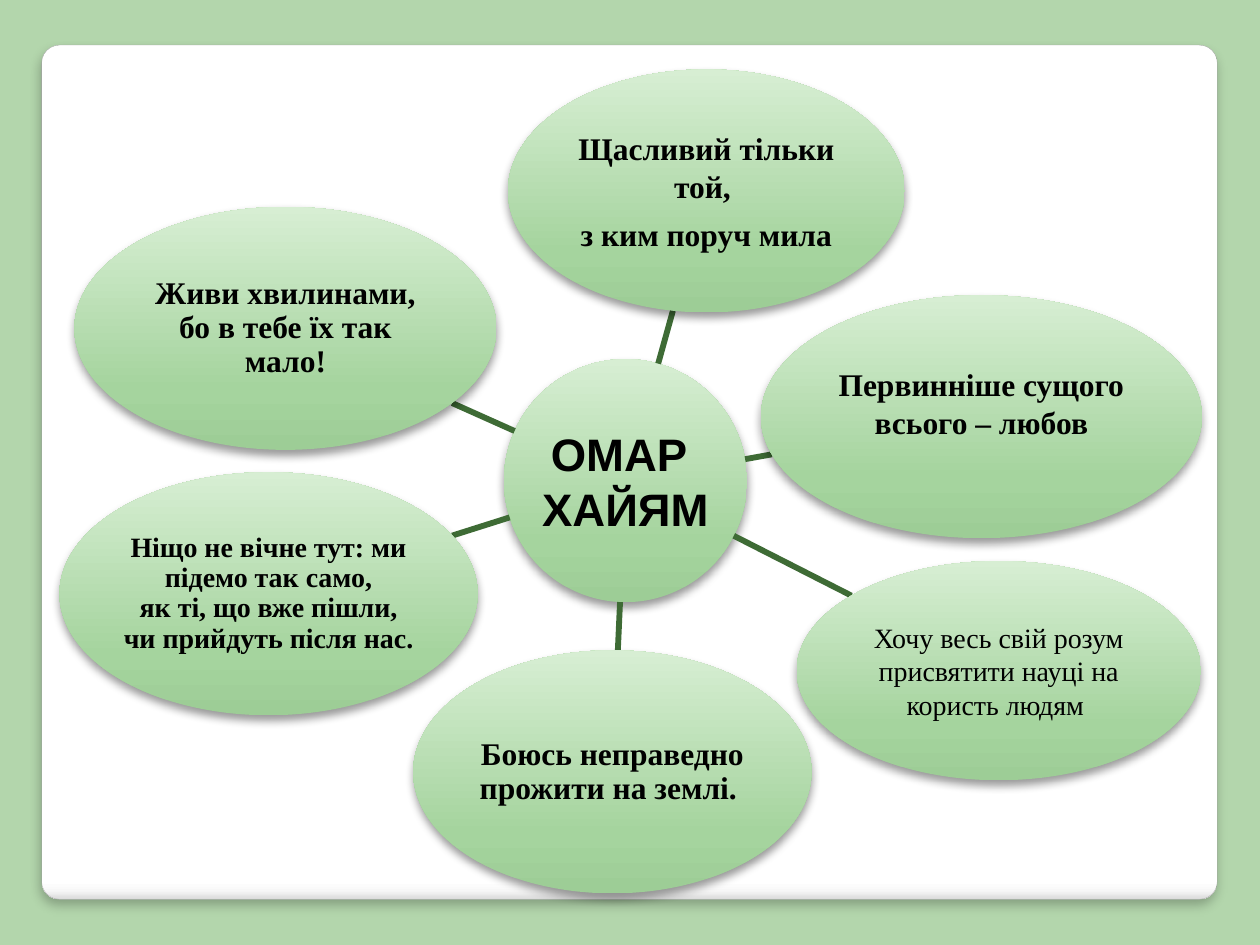
from math import hypot
from lxml.etree import SubElement as Sub
from pptx import Presentation
from pptx.dml.color import RGBColor
from pptx.enum.shapes import MSO_CONNECTOR as Link, MSO_SHAPE as Form
from pptx.enum.text import MSO_ANCHOR as Anchor, PP_ALIGN as Align
from pptx.oxml.ns import qn
from pptx.util import Cm, Pt

PAGE = RGBColor(0xB3, 0xD6, 0xAC)
WHITE = RGBColor(0xFF, 0xFF, 0xFF)
PALE = RGBColor(0xF7, 0xF7, 0xF7)
SILVER = RGBColor(0xDA, 0xDA, 0xDA)
EDGE = RGBColor(0xA4, 0xA4, 0xA4)
DEEP = RGBColor(0x9D, 0xCD, 0x96)
MID = RGBColor(0xA5, 0xD4, 0x9E)
LIGHT = RGBColor(0xD7, 0xEE, 0xD3)
STEM = RGBColor(0x3E, 0x6B, 0x35)
BLACK = RGBColor(0, 0, 0)

SERIF, SANS = "Times New Roman", "Arial"
CARD = (0.84, 0.91, 23.7, 17.22)
HUB = (9.32, 6.33, 4.9, 4.9)

# Petals: box within the card, paragraphs of lines, size, bold, line spacing,
# space after as a share of the size, bottom inset
PETALS = [
    ((9.4, 0.49, 8, 4.9), [["Щасливий тільки той, "], ["з ким поруч мила"]],
     18, True, 1, 0.35, 0.03),
    ((14.5, 5.04, 8.89, 4.9), [["Первинніше сущого всього – любов"]],
     18, True, 1, 0, 0.58),
    ((15.22, 10.4, 8.15, 4.42),
     [["Хочу весь свій розум присвятити науці на користь людям "]],
     16, False, 1, 0, 0.03),
    ((7.49, 12.2, 8.03, 4.9), [["Боюсь неправедно прожити на землі. "]],
     18, True, 0.9, 0.35, 0.03),
    ((0.36, 8.61, 8.43, 4.9),
     [["Ніщо не вічне тут: ми підемо так само,",
       "як ті, що вже пішли, чи прийдуть після нас. "]],
     16, True, 0.9, 0.35, 0.03),
    ((0.66, 3.26, 8.51, 4.9), [["Живи хвилинами, бо в тебе їх так мало!"]],
     18, True, 0.9, 0.35, 0.03),
]


def blend(shape, stops, angle):
    """Fill with a linear gradient of (percent, colour) stops."""
    shape.fill.gradient()
    shape.fill.gradient_angle = angle
    items = shape.element.spPr.find(qn("a:gradFill")).find(qn("a:gsLst"))
    for old in list(items):
        items.remove(old)
    for place, color in stops:
        stop = Sub(items, qn("a:gs"), pos=str(place * 1000))
        Sub(stop, qn("a:srgbClr"), val=str(color))


def shade(shape, alpha, blur, drop):
    """Cast a black shadow straight down."""
    shape.shadow.inherit = False
    effects = shape.element.spPr.find(qn("a:effectLst"))
    outer = Sub(effects, qn("a:outerShdw"), blurRad=str(Pt(blur)),
                dist=str(Pt(drop)), dir="5400000", algn="ctr", rotWithShape="0")
    color = Sub(outer, qn("a:srgbClr"), val=str(BLACK))
    Sub(color, qn("a:alpha"), val=str(alpha * 1000))


def add_card(slide, box):
    card = slide.shapes.add_shape(Form.ROUNDED_RECTANGLE, *map(Cm, box))
    card.adjustments[0] = 0.021
    blend(card, [(0, WHITE), (98, WHITE), (99, PALE), (100, SILVER)], 270)
    card.line.color.rgb = EDGE
    card.line.width = Pt(0.16)
    shade(card, 25, 6, 4)


def add_oval(slide, box, paras, size, bold, lead, after, low, face=SERIF):
    oval = slide.shapes.add_shape(Form.OVAL, *map(Cm, box))
    blend(oval, [(0, DEEP), (25, MID), (100, LIGHT)], 90)
    oval.line.fill.background()
    shade(oval, 40, 5.2, 3)

    frame = oval.text_frame
    frame.word_wrap = True
    frame.vertical_anchor = Anchor.MIDDLE
    frame.margin_left = frame.margin_right = frame.margin_top = Cm(0.03)
    frame.margin_bottom = Cm(low)
    for i, lines in enumerate(paras):
        para = frame.paragraphs[0] if i == 0 else frame.add_paragraph()
        para.alignment = Align.CENTER
        para.line_spacing = lead
        para.space_after = Pt(size * after)
        for j, line in enumerate(lines):
            if j:
                para.add_line_break()
            run = para.add_run()
            run.text = line
            run.font.name, run.font.size = face, Pt(size)
            run.font.bold, run.font.color.rgb = bold, BLACK


def center(box):
    x, y, w, h = box
    return x + w / 2, y + h / 2


def rim(box, goal):
    """Point where the ray from the oval's centre to goal leaves the oval."""
    x, y = center(box)
    dx, dy = goal[0] - x, goal[1] - y
    reach = hypot(dx / (box[2] / 2), dy / (box[3] / 2))
    return x + dx / reach, y + dy / reach


def add_stem(slide, hub, petal):
    ends = rim(hub, center(petal)) + rim(petal, center(hub))
    stem = slide.shapes.add_connector(Link.STRAIGHT, *map(Cm, ends))
    stem.line.color.rgb = STEM
    stem.line.width = Pt(3.35)
    Sub(stem.element.spPr, qn("a:effectLst"))


def add_map(slide, area):
    """Hub with petals around it, placed within area."""
    def shift(box):
        return (area[0] + box[0], area[1] + box[1], *box[2:])

    hub = shift(HUB)
    add_oval(slide, hub, [["ОМАР "], ["ХАЙЯМ"]], 26, True, 1, 0, 0.03, SANS)
    for box, *text in PETALS:
        petal = shift(box)
        add_stem(slide, hub, petal)
        add_oval(slide, petal, *text)


def main():
    deck = Presentation()
    deck.slide_width, deck.slide_height = Cm(25.4), Cm(19.05)
    slide = deck.slides.add_slide(deck.slide_layouts[6])
    slide.background.fill.solid()
    slide.background.fill.fore_color.rgb = PAGE
    add_card(slide, CARD)
    add_map(slide, CARD)
    deck.save("out.pptx")


if __name__ == "__main__":
    main()
